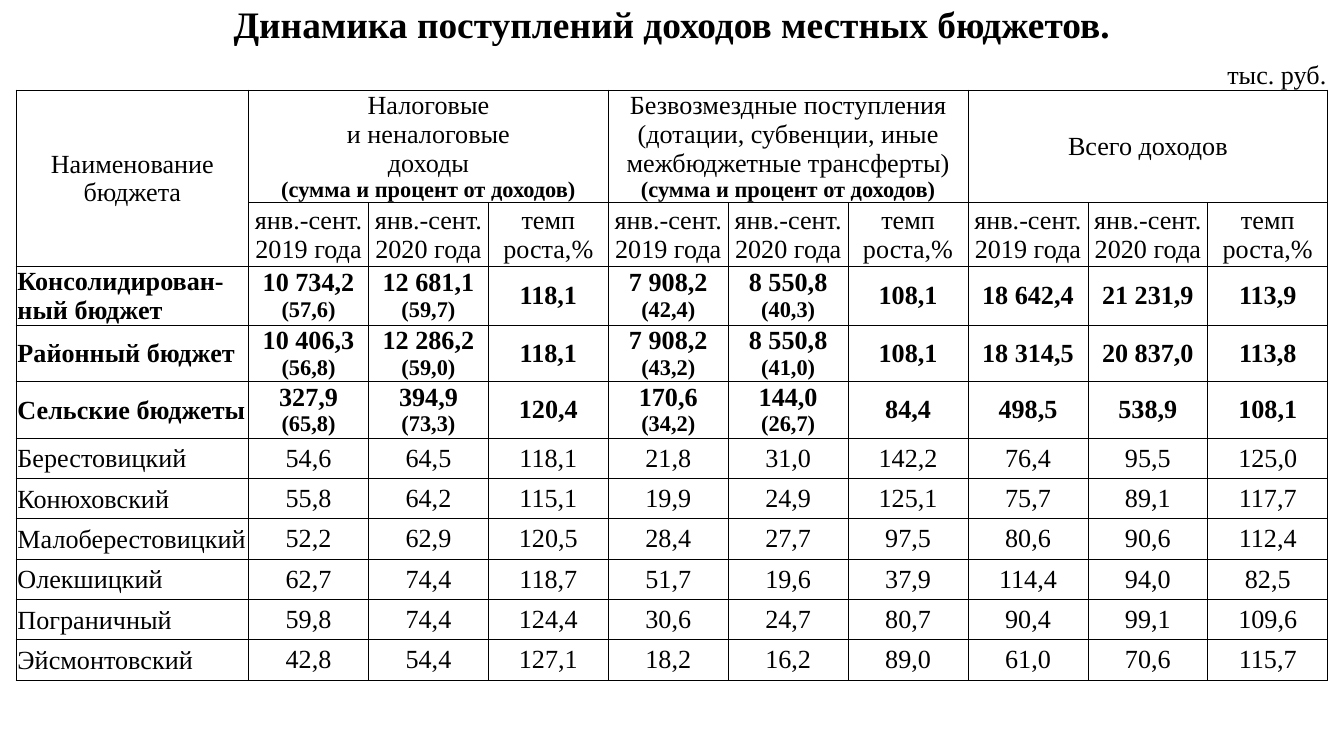
from dataclasses import dataclass

from lxml.etree import SubElement
from pptx import Presentation
from pptx.dml.color import RGBColor
from pptx.enum.text import MSO_ANCHOR, PP_ALIGN
from pptx.oxml.ns import qn
from pptx.util import Inches, Pt


@dataclass(frozen=True)
class Theme:
    font: str = "Times New Roman"
    ink: str = "000000"
    title_size: int = 20
    body_size: int = 14
    share_size: int = 12
    border_width: float = 0.5
    inset: float = 0.01
    plain_table_style: str = "{2D5ABB26-0587-4C30-8999-92F81FD0307C}"


THEME = Theme()
SLIDE_WIDTH = 10
SLIDE_HEIGHT = SLIDE_WIDTH * 9 / 16
TABLE_LEFT, TABLE_TOP, TABLE_WIDTH, TABLE_HEIGHT = 0.12, 0.03, 9.76, 5.25
NAME_WIDTH = 1.73
FIGURE_COLUMNS = 9
PERIODS_PER_GROUP = 3
TITLE_ROW, UNIT_ROW, GROUP_ROW, PERIOD_ROW, FIRST_BUDGET_ROW = range(5)
HEADER_HEIGHTS = [0.32, 0.32, 0.47, 0.47]
BUDGET_HEIGHT = 0.3

TITLE = "Динамика поступлений доходов местных бюджетов."
UNIT = "тыс. руб."
SHARE_NOTE = "(сумма и процент от доходов)"
GROUPS = [
    f"Налоговые\nи неналоговые\nдоходы\n{SHARE_NOTE}",
    "Безвозмездные поступления (дотации, субвенции, иные "
    f"межбюджетные трансферты)\n{SHARE_NOTE}",
    "Всего доходов",
]
PERIODS = ["янв.-сент. 2019 года", "янв.-сент. 2020 года", "темп\nроста,%"]

TOTALS = [
    ["Консолидирован-ный бюджет", "10 734,2\n(57,6)", "12 681,1\n(59,7)", "118,1",
     "7 908,2\n(42,4)", "8 550,8\n(40,3)", "108,1", "18 642,4", "21 231,9", "113,9"],
    ["Районный бюджет", "10 406,3\n(56,8)", "12 286,2\n(59,0)", "118,1",
     "7 908,2\n(43,2)", "8 550,8\n(41,0)", "108,1", "18 314,5", "20 837,0", "113,8"],
    ["Сельские бюджеты", "327,9\n(65,8)", "394,9\n(73,3)", "120,4",
     "170,6\n(34,2)", "144,0\n(26,7)", "84,4", "498,5", "538,9", "108,1"],
]
VILLAGES = [
    ["Берестовицкий", "54,6", "64,5", "118,1", "21,8", "31,0", "142,2", "76,4", "95,5", "125,0"],
    ["Конюховский", "55,8", "64,2", "115,1", "19,9", "24,9", "125,1", "75,7", "89,1", "117,7"],
    ["Малоберестовицкий", "52,2", "62,9", "120,5", "28,4", "27,7", "97,5", "80,6", "90,6", "112,4"],
    ["Олекшицкий", "62,7", "74,4", "118,7", "51,7", "19,6", "37,9", "114,4", "94,0", "82,5"],
    ["Пограничный", "59,8", "74,4", "124,4", "30,6", "24,7", "80,7", "90,4", "99,1", "109,6"],
    ["Эйсмонтовский", "42,8", "54,4", "127,1", "18,2", "16,2", "89,0", "61,0", "70,6", "115,7"],
]


def draw_borders(cell, sides):
    properties = cell._tc.get_or_add_tcPr()
    for side in sides:
        line = SubElement(properties, qn(f"a:ln{side}"), w=str(Pt(THEME.border_width)))
        SubElement(SubElement(line, qn("a:solidFill")), qn("a:srgbClr"), val=THEME.ink)


def prepare_cell(cell, row):
    """Give a cell its borders, insets and a body-sized empty line."""
    if row >= GROUP_ROW:
        draw_borders(cell, "LRTB")
    elif row == UNIT_ROW:
        draw_borders(cell, "B")
    cell.fill.background()
    cell.margin_left = cell.margin_right = cell.margin_top = Inches(THEME.inset)
    cell.margin_bottom = Inches(THEME.inset if row >= FIRST_BUDGET_ROW else 0)
    SubElement(cell.text_frame.paragraphs[0]._p, qn("a:endParaRPr"),
               sz=str(THEME.body_size * 100))


def write_cell(cell, text, align=PP_ALIGN.CENTER, bold=False,
               size=THEME.body_size, anchor=MSO_ANCHOR.MIDDLE):
    """Write one paragraph per line; lines in brackets are small and bold."""
    cell.text = text
    cell.vertical_anchor = anchor
    for paragraph in cell.text_frame.paragraphs:
        is_share = paragraph.text.startswith("(")
        paragraph.alignment = align
        font = paragraph.font
        font.name = THEME.font
        font.size = Pt(THEME.share_size if is_share else size)
        font.bold = bold or is_share
        font.color.rgb = RGBColor.from_string(THEME.ink)


def merge(table, row, column, rows=1, columns=1):
    cell = table.cell(row, column)
    cell.merge(table.cell(row + rows - 1, column + columns - 1))
    return cell


def add_plain_table(slide, heights):
    frame = slide.shapes.add_table(
        len(heights), FIGURE_COLUMNS + 1, Inches(TABLE_LEFT), Inches(TABLE_TOP),
        Inches(TABLE_WIDTH), Inches(TABLE_HEIGHT))
    table = frame.table
    table.first_row = table.horz_banding = False
    table._tbl.tblPr.find(qn("a:tableStyleId")).text = THEME.plain_table_style
    figure_width = (TABLE_WIDTH - NAME_WIDTH) / FIGURE_COLUMNS
    for index, column in enumerate(table.columns):
        column.width = Inches(figure_width if index else NAME_WIDTH)
    for index, height in enumerate(heights):
        table.rows[index].height = Inches(height)
        for cell in table.rows[index].cells:
            prepare_cell(cell, index)
    frame.height = Inches(TABLE_HEIGHT)
    return table


def fill_header(table):
    last_column = FIGURE_COLUMNS
    write_cell(merge(table, TITLE_ROW, 0, columns=last_column + 1), TITLE,
               bold=True, size=THEME.title_size, anchor=MSO_ANCHOR.BOTTOM)
    for column in (1, 3, 5):
        merge(table, UNIT_ROW, column, columns=2)
    write_cell(table.cell(UNIT_ROW, last_column), UNIT,
               PP_ALIGN.RIGHT, anchor=MSO_ANCHOR.BOTTOM)
    write_cell(merge(table, GROUP_ROW, 0, rows=2), "Наименование бюджета")
    for index, group in enumerate(GROUPS):
        first = 1 + index * PERIODS_PER_GROUP
        write_cell(merge(table, GROUP_ROW, first, columns=PERIODS_PER_GROUP), group)
        for offset, period in enumerate(PERIODS):
            write_cell(table.cell(PERIOD_ROW, first + offset), period)


def fill_budgets(table):
    for index, budget in enumerate(TOTALS + VILLAGES):
        for column, text in enumerate(budget):
            cell = table.cell(FIRST_BUDGET_ROW + index, column)
            align = PP_ALIGN.CENTER if column else PP_ALIGN.LEFT
            write_cell(cell, text, align, bold=index < len(TOTALS))
        table.cell(FIRST_BUDGET_ROW + index, 0).margin_bottom = 0


def main():
    presentation = Presentation()
    presentation.slide_width = Inches(SLIDE_WIDTH)
    presentation.slide_height = Inches(SLIDE_HEIGHT)
    slide = presentation.slides.add_slide(presentation.slide_layouts[6])
    budget_count = len(TOTALS) + len(VILLAGES)
    table = add_plain_table(slide, HEADER_HEIGHTS + [BUDGET_HEIGHT] * budget_count)
    fill_header(table)
    fill_budgets(table)
    presentation.save("out.pptx")


if __name__ == "__main__":
    main()
